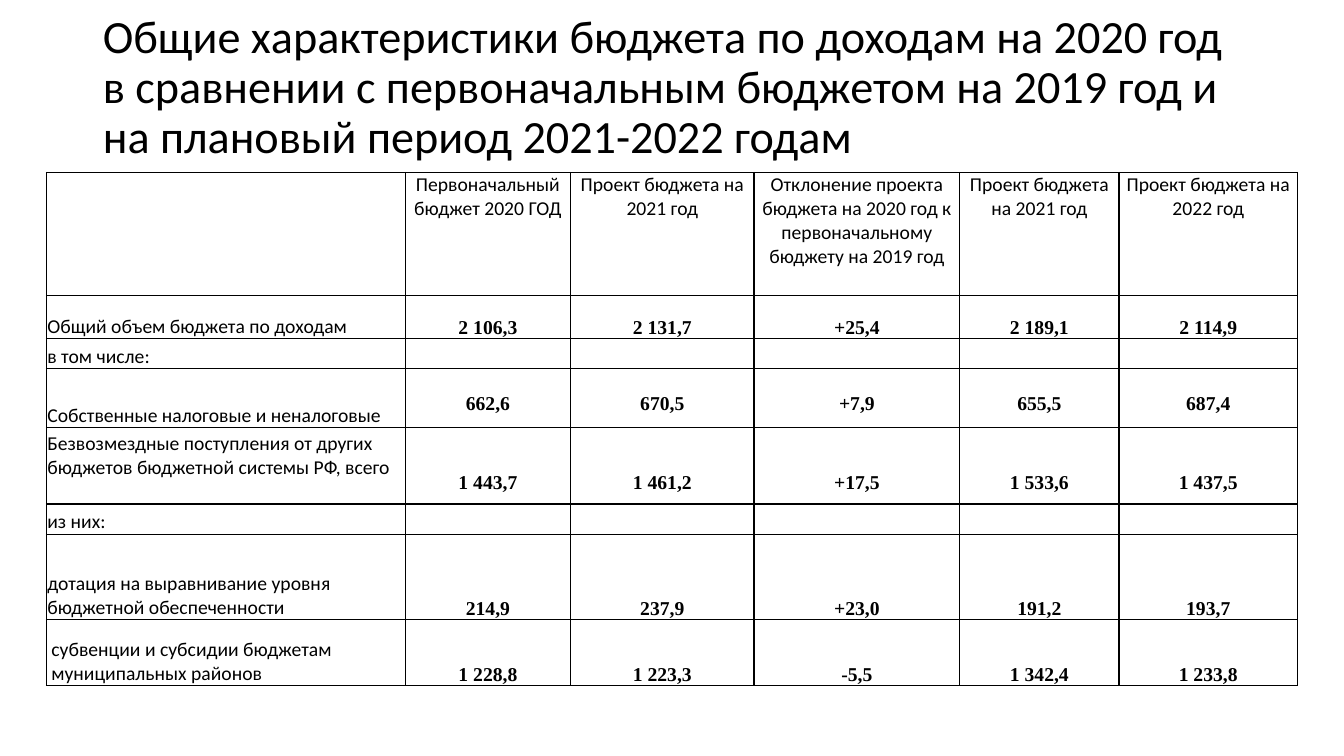
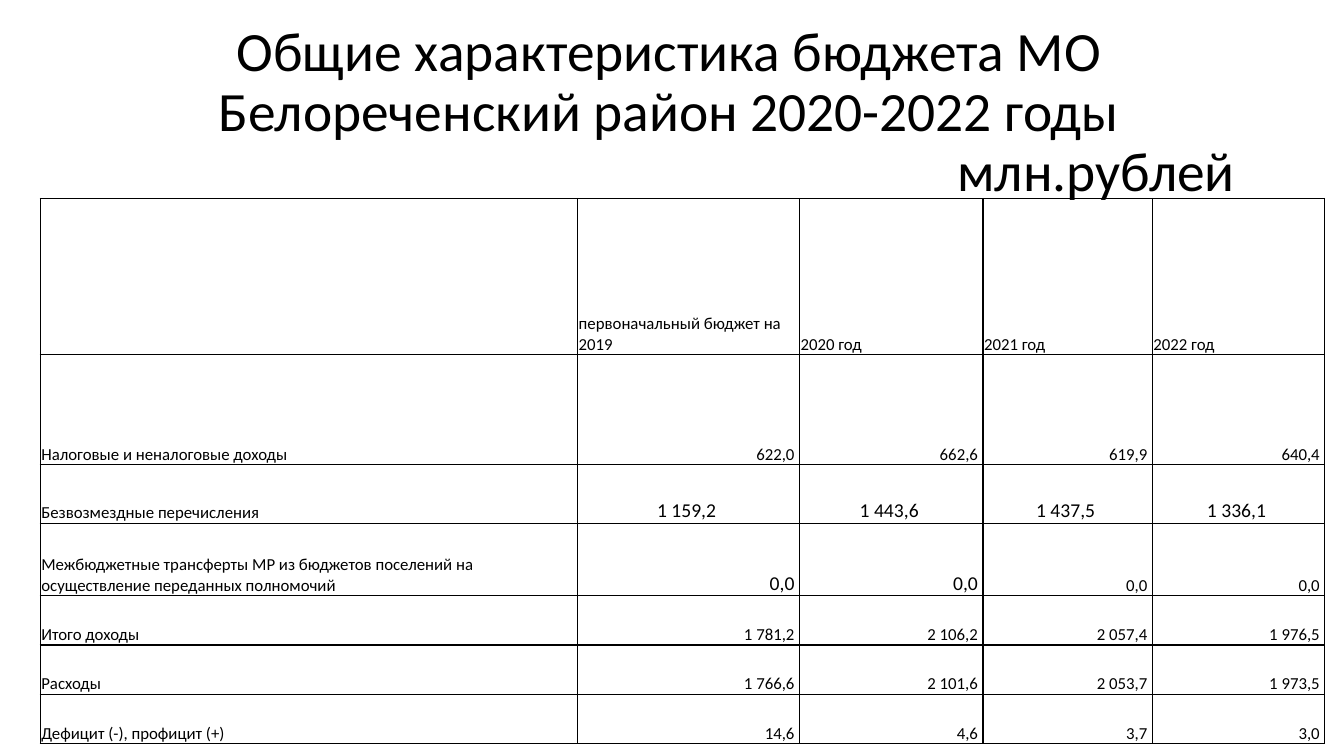
from dataclasses import dataclass, replace

from lxml import etree
from pptx import Presentation
from pptx.dml.color import RGBColor
from pptx.enum.text import MSO_ANCHOR, MSO_AUTO_SIZE, PP_ALIGN
from pptx.oxml.ns import qn
from pptx.util import Inches, Pt

LEFT, CENTER, RIGHT = PP_ALIGN.LEFT, PP_ALIGN.CENTER, PP_ALIGN.RIGHT
TOP, MIDDLE, BOTTOM = MSO_ANCHOR.TOP, MSO_ANCHOR.MIDDLE, MSO_ANCHOR.BOTTOM
NO_AUTOFIT = MSO_AUTO_SIZE.NONE
TITLE_ONLY = 5


@dataclass(frozen=True)
class Theme:
    ink: str = "000000"
    font: str = "Calibri"
    figure_font: str = "Times New Roman"
    long_title: float = 33
    title: float = 39.6
    body: float = 14
    small: float = 12
    border: float = 1


THEME = Theme()


@dataclass(frozen=True)
class CellStyle:
    """Text style of a cell; insets are left, top, right, bottom in inches."""
    size: float = THEME.body
    font: str = THEME.font
    bold: bool = False
    align: int = LEFT
    anchor: int = BOTTOM
    insets: tuple = (0.01, 0.01, 0.01, 0)


LABEL = CellStyle()
HEADING = replace(LABEL, align=CENTER, anchor=TOP)
FIGURE = CellStyle(font=THEME.figure_font, bold=True, align=CENTER,
                   insets=(0.07, 0, 0.07, 0))
SMALL_LABEL = replace(LABEL, size=THEME.small)
AMOUNT = replace(SMALL_LABEL, align=RIGHT, insets=(0.01, 0.01, 0.05, 0))
LARGE_AMOUNT = replace(AMOUNT, size=THEME.body)
CENTERED_AMOUNT = replace(LARGE_AMOUNT, align=CENTER)


def raised(style, gap):
    """The same style with its text lifted off the cell's bottom edge."""
    return replace(style, insets=style.insets[:3] + (gap,))


def format_runs(paragraph, size, font=THEME.font, bold=False):
    for run in paragraph.runs:
        run.font.size = Pt(size)
        run.font.name = font
        run.font.bold = bold
        run.font.color.rgb = RGBColor.from_string(THEME.ink)


def add_titled_slide(deck, lines, alignments, size, top):
    slide = deck.slides.add_slide(deck.slide_layouts[TITLE_ONLY])
    title = slide.shapes.title
    title.left, title.top = Inches(0.92), Inches(top)
    title.width, title.height = Inches(11.5), Inches(1.45)
    frame = title.text_frame
    frame.text = "\n".join(lines)
    frame.word_wrap = True
    frame.auto_size = NO_AUTOFIT
    frame.vertical_anchor = MIDDLE
    frame.margin_right = Inches(0.17)
    for paragraph, alignment in zip(frame.paragraphs, alignments):
        paragraph.alignment = alignment
        paragraph.line_spacing = 0.9
        paragraph.space_before = Pt(0)
        format_runs(paragraph, size)
    return slide


def set_borders(cell):
    properties = cell._tc.get_or_add_tcPr()
    for side in ("a:lnL", "a:lnR", "a:lnT", "a:lnB"):
        line = etree.SubElement(properties, qn(side), w=str(Pt(THEME.border)))
        fill = etree.SubElement(line, qn("a:solidFill"))
        etree.SubElement(fill, qn("a:srgbClr"), val=THEME.ink)


def fill_cell(cell, text, style):
    set_borders(cell)
    cell.fill.background()
    cell.vertical_anchor = style.anchor
    (cell.margin_left, cell.margin_top,
     cell.margin_right, cell.margin_bottom) = map(Inches, style.insets)
    paragraph = cell.text_frame.paragraphs[0]
    paragraph.text = text
    paragraph.alignment = style.align
    format_runs(paragraph, style.size, style.font, style.bold)
    if not text:
        etree.SubElement(paragraph._p, qn("a:endParaRPr"),
                         sz=str(int(style.size * 100)))


def add_budget_table(slide, left, top, widths, rows):
    """Each row is: height, texts, label style, one value style or a list."""
    heights = [row[0] for row in rows]
    table = slide.shapes.add_table(
        len(rows), len(widths), Inches(left), Inches(top),
        Inches(sum(widths)), Inches(sum(heights))).table
    table.first_row = table.horz_banding = False
    for column, width in zip(table.columns, widths):
        column.width = Inches(width)
    for table_row, (height, texts, label_style, value_style) in zip(table.rows, rows):
        table_row.height = Inches(height)
        if isinstance(value_style, CellStyle):
            value_style = [value_style] * (len(widths) - 1)
        texts = texts + [""] * (len(widths) - len(texts))
        for cell, text, style in zip(table_row.cells, texts,
                                     [label_style, *value_style]):
            fill_cell(cell, text, style)


def add_income_slide(deck):
    slide = add_titled_slide(
        deck,
        ["Общие характеристики бюджета по доходам на 2020 год в сравнении с "
         "первоначальным бюджетом на 2019 год и на плановый период 2021-2022 годам"],
        [LEFT], THEME.long_title, top=0.15)
    indented = replace(LABEL, insets=(0.05, 0.01, 0.01, 0))
    rows = [
        (1.22, ["", "Первоначальный бюджет 2020 ГОД", "Проект бюджета на 2021 год",
                "Отклонение проекта бюджета на 2020 год к первоначальному "
                "бюджету на 2019 год",
                "Проект бюджета на 2021 год", "Проект бюджета на 2022 год"],
         LABEL, HEADING),
        (0.43, ["Общий объем бюджета по доходам",
                "2 106,3", "2 131,7", "+25,4", "2 189,1", "2 114,9"], LABEL, FIGURE),
        (0.3, ["в том числе:"], LABEL, FIGURE),
        (0.58, ["Собственные налоговые и неналоговые",
                "662,6", "670,5", "+7,9", "655,5", "687,4"],
         LABEL, raised(FIGURE, 0.13)),
        (0.76, ["Безвозмездные поступления от других бюджетов бюджетной системы "
                "РФ, всего", "1 443,7", "1 461,2", "+17,5", "1 533,6", "1 437,5"],
         raised(LABEL, 0.24), raised(FIGURE, 0.1)),
        (0.3, ["из них:"], LABEL, FIGURE),
        (0.85, ["дотация на выравнивание уровня бюджетной обеспеченности",
                "214,9", "237,9", "+23,0", "191,2", "193,7"], LABEL, FIGURE),
        (0.65, ["субвенции и субсидии бюджетам муниципальных районов",
                "1 228,8", "1 223,3", "-5,5", "1 342,4", "1 233,8"],
         indented, FIGURE),
    ]
    add_budget_table(slide, 0.46, 1.71, [3.56, 1.64, 1.82, 2.04, 1.58, 1.77], rows)


def add_balance_slide(deck):
    slide = add_titled_slide(
        deck,
        ["Общие характеристика бюджета МО Белореченский район 2020-2022 годы",
         "млн.рублей"],
        [CENTER, RIGHT], THEME.title, top=0.4)
    rows = [
        (1.55, ["", "первоначальный бюджет на 2019", "2020 год", "2021 год",
                "2022 год"], SMALL_LABEL, SMALL_LABEL),
        (1.09, ["Налоговые и неналоговые доходы",
                "622,0", "662,6", "619,9", "640,4"], SMALL_LABEL, AMOUNT),
        (0.58, ["Безвозмездные перечисления",
                "1 159,2", "1 443,6", "1 437,5", "1 336,1"],
         SMALL_LABEL, CENTERED_AMOUNT),
        (0.72, ["Межбюджетные трансферты МР из бюджетов поселений на "
                "осуществление переданных полномочий", "0,0", "0,0", "0,0", "0,0"],
         SMALL_LABEL, [LARGE_AMOUNT] * 2 + [AMOUNT] * 2),
        (0.49, ["Итого доходы", "1 781,2", "2 106,2", "2 057,4", "1 976,5"],
         SMALL_LABEL, AMOUNT),
        (0.49, ["Расходы", "1 766,6", "2 101,6", "2 053,7", "1 973,5"],
         SMALL_LABEL, AMOUNT),
        (0.49, ["Дефицит (-), профицит (+)", "14,6", "4,6", "3,7", "3,0"],
         SMALL_LABEL, AMOUNT),
    ]
    add_budget_table(slide, 0.4, 1.97, [5.33, 2.2, 1.82, 1.68, 1.71], rows)


def main():
    deck = Presentation()
    deck.slide_width, deck.slide_height = Inches(13.33), Inches(7.5)
    add_income_slide(deck)
    add_balance_slide(deck)
    deck.save("out.pptx")


if __name__ == "__main__":
    main()
